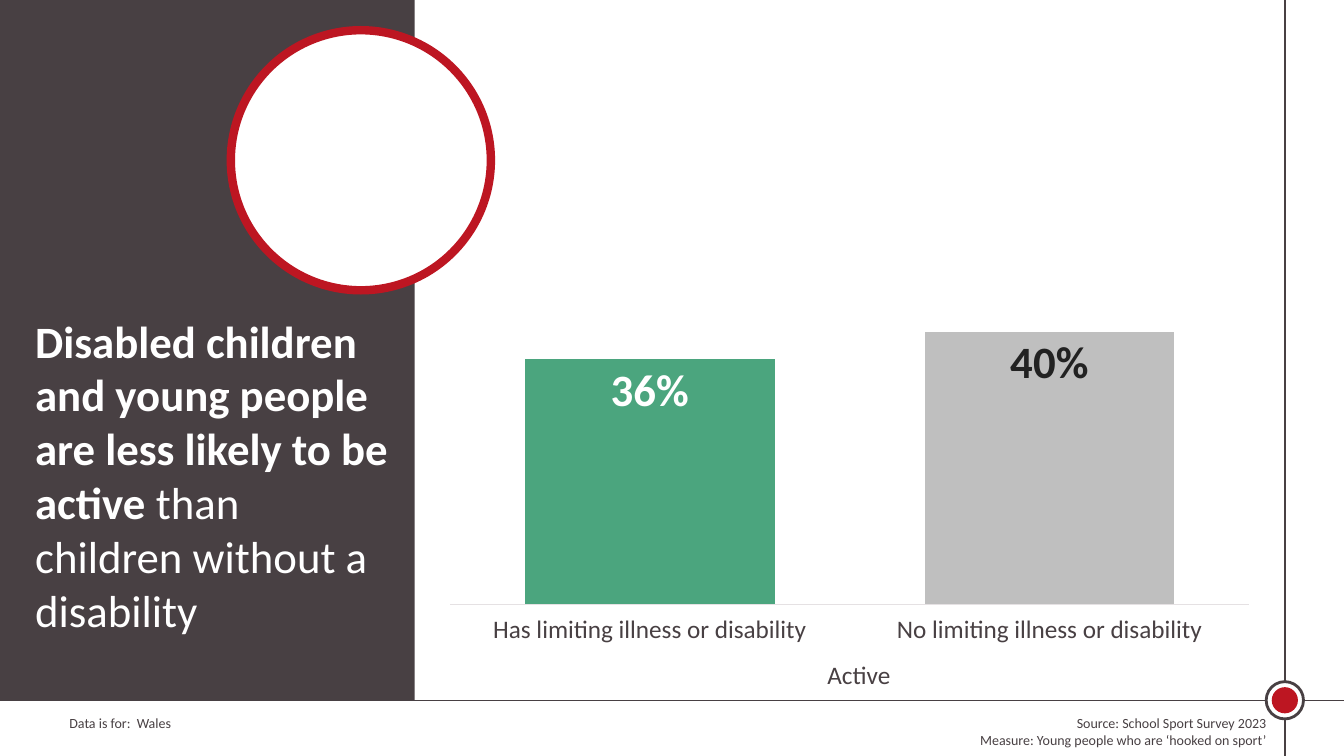
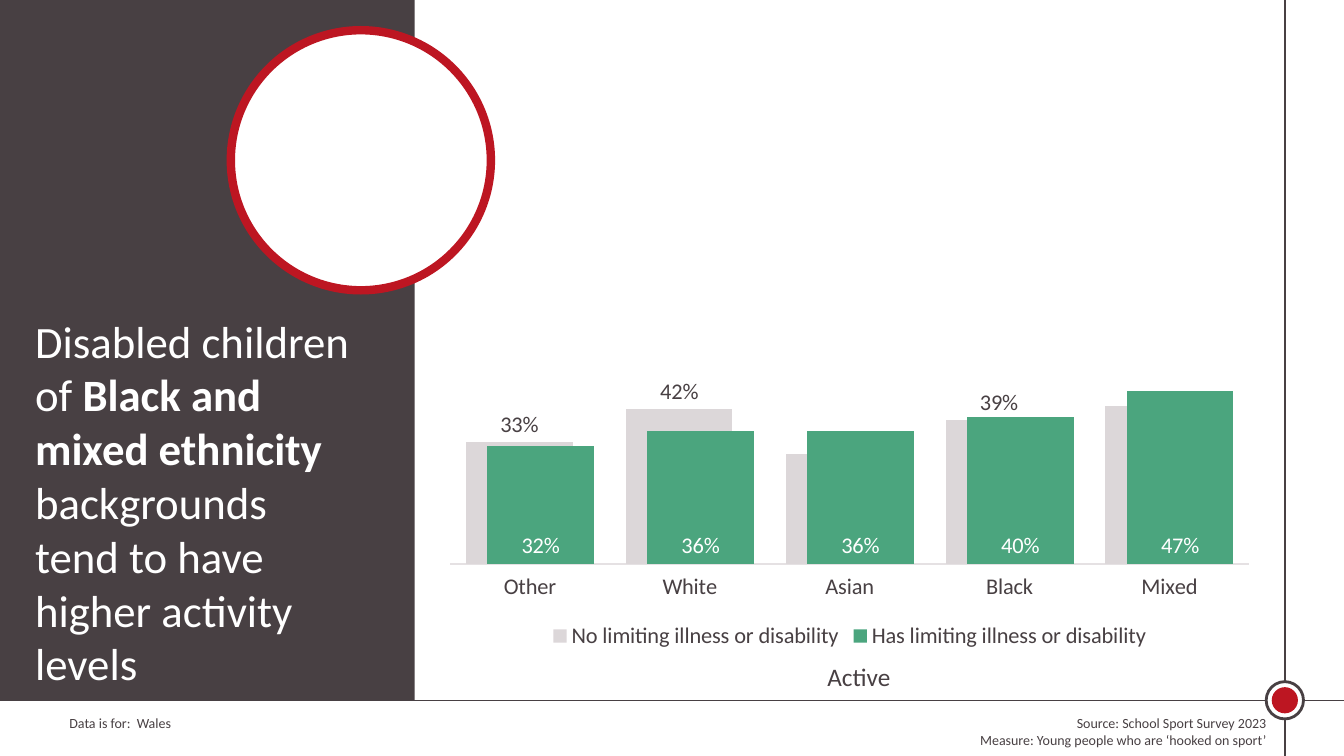
from dataclasses import dataclass, field

from lxml.etree import SubElement
from pptx import Presentation
from pptx.chart.data import CategoryChartData
from pptx.dml.color import RGBColor
from pptx.enum.chart import XL_CHART_TYPE, XL_LABEL_POSITION, XL_LEGEND_POSITION, XL_TICK_LABEL_POSITION, XL_TICK_MARK
from pptx.enum.shapes import MSO_CONNECTOR, MSO_SHAPE
from pptx.enum.text import PP_ALIGN
from pptx.oxml import parse_xml
from pptx.oxml.ns import nsdecls, qn
from pptx.util import Inches, Pt

COLOURS = {
    "dark": "484043",
    "red": "BD1622",
    "green": "4BA57E",
    "grey": "BFBFBF",
    "pale": "DCD7D9",
    "axis": "E5E1E3",
    "black": "222222",
    "white": "FFFFFF",
}
FONT = "Calibri"
SLIDE_WIDTH = Inches(13.333)
SLIDE_HEIGHT = Inches(7.5)
COLUMNS = 40
ROWS = 30
RULE_COLUMN = 38.24
RULE_ROW = 27.79
PANEL_COLUMNS = 12.34


@dataclass(frozen=True)
class Box:
    column: float
    row: float
    columns: float
    rows: float

    def lengths(self) -> tuple[int, int, int, int]:
        return across(self.column), down(self.row), across(self.columns), down(self.rows)


@dataclass(frozen=True)
class Run:
    text: str
    bold: bool = False


@dataclass(frozen=True)
class Series:
    name: str
    values: list[float]
    colour: str
    label_colour: str
    label_position: XL_LABEL_POSITION
    label_size: int = 16
    label_bold: bool = False
    point_colours: dict[int, tuple[str, str]] = field(default_factory=dict)
    unlabelled: tuple[int, ...] = ()


@dataclass(frozen=True)
class ChartSlide:
    title: list[Run]
    title_box: Box
    caption_row: float
    categories: list[str]
    series: list[Series]
    axis_maximum: float
    gap: int
    overlap: int = 0
    axis_size: int = 16
    legend: bool = False


CHART_BOX = Box(12.9, 7.4, 24.78, 18.56)
CHART_SLIDES = [
    ChartSlide(
        title=[
            Run("Disabled children and young people are less likely to be active ", True),
            Run("than children without a disability"),
        ],
        title_box=Box(0.75, 12.24, 11.13, 15.48),
        caption_row=25.96,
        categories=["Has limiting illness or disability", "No limiting illness or disability"],
        series=[
            Series("Series 1", [0.36, 0.4], "green", "white", XL_LABEL_POSITION.INSIDE_END,
                   label_size=32, label_bold=True, point_colours={1: ("grey", "black")}),
        ],
        axis_maximum=0.6,
        gap=60,
        axis_size=18,
    ),
    ChartSlide(
        title=[
            Run("Disabled children of "),
            Run("Black and mixed ethnicity ", True),
            Run("backgrounds tend to have higher activity levels"),
        ],
        title_box=Box(0.75, 12.24, 10.29, 13.32),
        caption_row=26.04,
        categories=["Other", "White", "Asian", "Black", "Mixed"],
        series=[
            Series("No limiting illness or disability", [0.33, 0.42, 0.3, 0.39, 0.43],
                   "pale", "dark", XL_LABEL_POSITION.OUTSIDE_END, unlabelled=(2, 4)),
            Series("Has limiting illness or disability", [0.32, 0.36, 0.36, 0.4, 0.47],
                   "green", "white", XL_LABEL_POSITION.INSIDE_BASE),
        ],
        axis_maximum=1,
        gap=30,
        overlap=80,
        legend=True,
    ),
]


def across(columns: float) -> int:
    return round(SLIDE_WIDTH * columns / COLUMNS)


def down(rows: float) -> int:
    return round(SLIDE_HEIGHT * rows / ROWS)


def colour_of(name: str) -> RGBColor:
    return RGBColor.from_string(COLOURS[name])


def set_font(font, size: float, colour: str, bold: bool = False) -> None:
    font.name = FONT
    font.size = Pt(size)
    font.bold = bold
    font.color.rgb = colour_of(colour)


def add_text(slide, paragraphs: list[list[Run]], *, box: Box, size: float,
             colour: str = "dark", align: PP_ALIGN = PP_ALIGN.LEFT) -> None:
    frame = slide.shapes.add_textbox(*box.lengths()).text_frame
    frame.word_wrap = True
    for index, runs in enumerate(paragraphs):
        paragraph = frame.add_paragraph() if index else frame.paragraphs[0]
        paragraph.alignment = align
        for run in runs:
            text_run = paragraph.add_run()
            text_run.text = run.text
            set_font(text_run.font, size, colour, run.bold)


def add_figure(slide, kind: MSO_SHAPE, lengths: tuple[int, int, int, int], *, fill: str,
               line: str | None = None, weight: float = 0) -> None:
    shape = slide.shapes.add_shape(kind, *lengths)
    shape.shadow.inherit = False
    shape.fill.solid()
    shape.fill.fore_color.rgb = colour_of(fill)
    if line:
        shape.line.color.rgb = colour_of(line)
        shape.line.width = Pt(weight)
    else:
        shape.line.fill.background()


def add_circle(slide, column: float, row: float, diameter: float, **style) -> None:
    side = across(diameter)
    lengths = (across(column) - side // 2, down(row) - side // 2, side, side)
    add_figure(slide, MSO_SHAPE.OVAL, lengths, **style)


def add_rule(slide, start: tuple[float, float], end: tuple[float, float]) -> None:
    connector = slide.shapes.add_connector(
        MSO_CONNECTOR.STRAIGHT, across(start[0]), down(start[1]), across(end[0]), down(end[1]))
    connector.line.color.rgb = colour_of("dark")
    connector.line.width = Pt(1)
    SubElement(connector._element.spPr, qn("a:effectLst"))


def add_frame(slide) -> None:
    add_text(slide, [[Run("Data is for:  Wales")]], box=Box(1.77, 28.16, 13.17, 1.08), size=10)
    add_rule(slide, (RULE_COLUMN, 0), (RULE_COLUMN, ROWS))
    add_rule(slide, (0, RULE_ROW), (COLUMNS, RULE_ROW))
    add_circle(slide, RULE_COLUMN, RULE_ROW, 1.11, fill="white", line="dark", weight=2)
    add_circle(slide, RULE_COLUMN, RULE_ROW, 0.78, fill="red")
    add_figure(slide, MSO_SHAPE.RECTANGLE, Box(0, 0, PANEL_COLUMNS, RULE_ROW).lengths(), fill="dark")
    add_circle(slide, 10.74, 6.36, 7.74, fill="white", line="red", weight=6)
    source = [[Run("Source: School Sport Survey 2023")],
              [Run("Measure: Young people who are ‘hooked on sport’")]]
    add_text(slide, source, box=Box(18.57, 28.16, 19.41, 1.76), size=10, align=PP_ALIGN.RIGHT)


def style_series(plot_series, series: Series) -> None:
    plot_series.format.fill.solid()
    plot_series.format.fill.fore_color.rgb = colour_of(series.colour)
    plot_series.invert_if_negative = False
    labels = plot_series.data_labels
    labels.show_value = True
    labels.position = series.label_position
    labels.number_format = "0%"
    labels.number_format_is_linked = False
    set_font(labels.font, series.label_size, series.label_colour, series.label_bold)
    for index, (fill, text) in series.point_colours.items():
        point = plot_series.points[index]
        point.format.fill.solid()
        point.format.fill.fore_color.rgb = colour_of(fill)
        set_font(point.data_label.font, series.label_size, text, series.label_bold)
        point.data_label.position = series.label_position
    for position, index in enumerate(series.unlabelled):
        labels._element.insert(position, parse_xml(
            f'<c:dLbl {nsdecls("c")}><c:idx val="{index}"/><c:delete val="1"/></c:dLbl>'))


def add_columns(slide, content: ChartSlide) -> None:
    data = CategoryChartData(number_format="0%")
    data.categories = content.categories
    for series in content.series:
        data.add_series(series.name, series.values)
    chart = slide.shapes.add_chart(
        XL_CHART_TYPE.COLUMN_CLUSTERED, *CHART_BOX.lengths(), data).chart
    chart.has_title = False
    set_font(chart.font, 16, "dark")
    chart.has_legend = content.legend
    if content.legend:
        chart.legend.position = XL_LEGEND_POSITION.BOTTOM
        chart.legend.include_in_layout = False
        set_font(chart.legend.font, 16, "dark")
    value_axis = chart.value_axis
    value_axis.minimum_scale = 0
    value_axis.maximum_scale = content.axis_maximum
    value_axis.has_major_gridlines = False
    value_axis.visible = False
    category_axis = chart.category_axis
    category_axis.major_tick_mark = XL_TICK_MARK.NONE
    category_axis.tick_label_position = XL_TICK_LABEL_POSITION.LOW
    category_axis.format.line.color.rgb = colour_of("axis")
    category_axis.format.line.width = Pt(0.75)
    set_font(category_axis.tick_labels.font, content.axis_size, "dark")
    plot = chart.plots[0]
    plot.vary_by_categories = False
    plot.gap_width = content.gap
    plot.overlap = content.overlap
    for plot_series, series in zip(plot.series, content.series):
        style_series(plot_series, series)


def main() -> None:
    presentation = Presentation()
    presentation.slide_width = SLIDE_WIDTH
    presentation.slide_height = SLIDE_HEIGHT
    for content in CHART_SLIDES:
        slide = presentation.slides.add_slide(presentation.slide_layouts[6])
        add_frame(slide)
        add_text(slide, [content.title], box=content.title_box, size=32, colour="white")
        add_text(slide, [[Run("Active")]], box=Box(24.33, content.caption_row, 3.66, 1.6), size=18)
        add_columns(slide, content)
    presentation.save("out.pptx")


if __name__ == "__main__":
    main()
